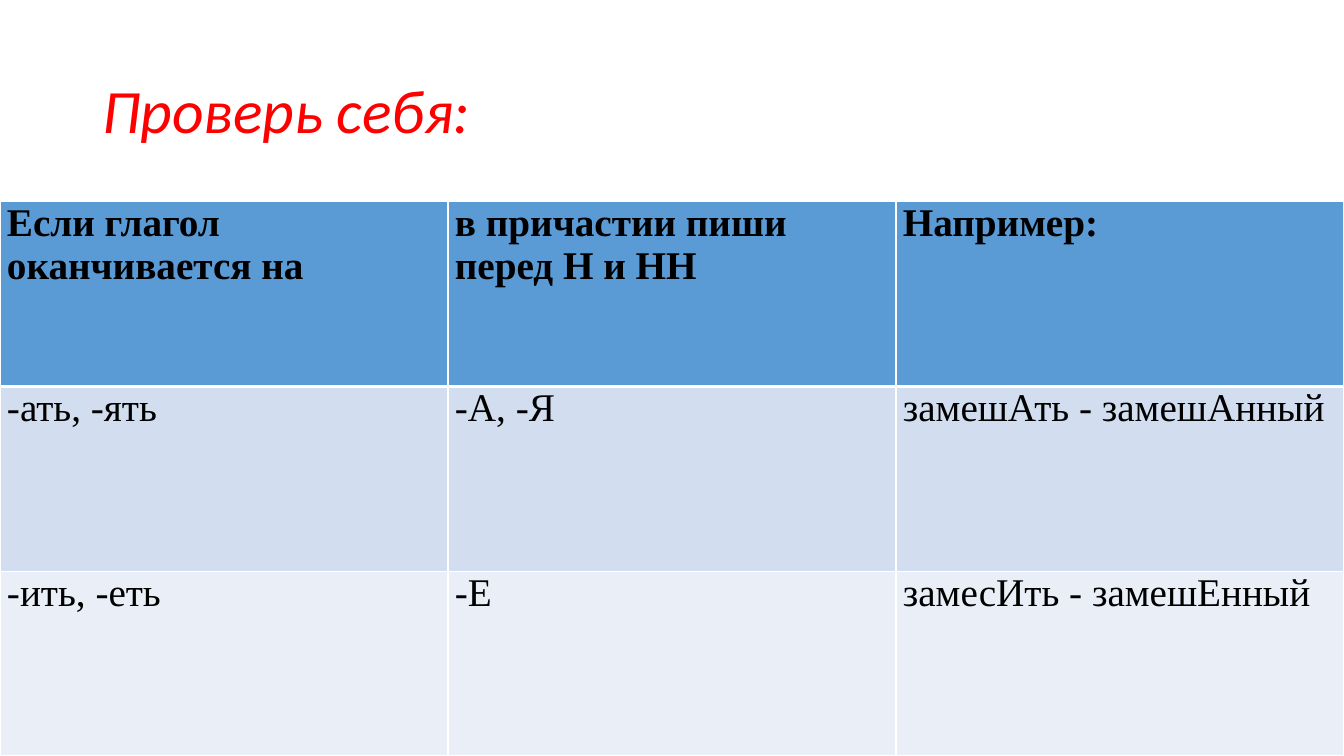
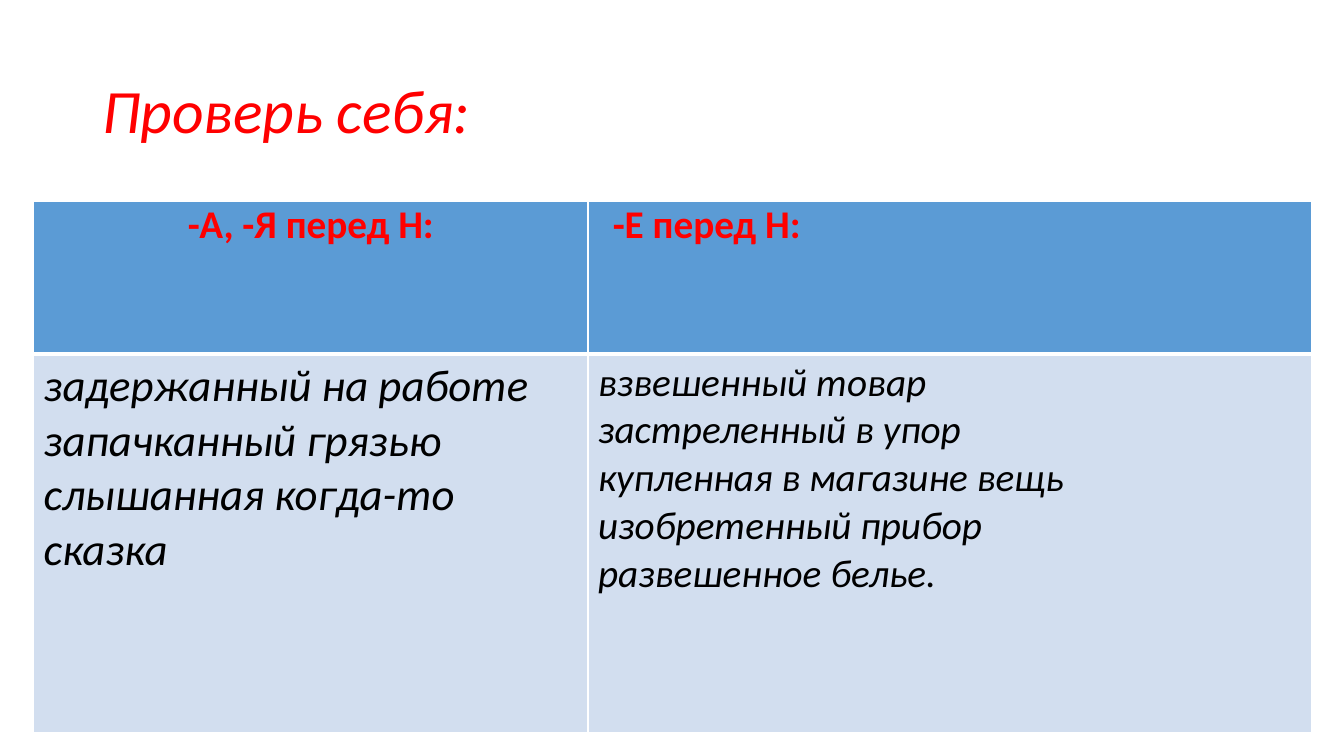
from dataclasses import dataclass

from lxml.etree import SubElement
from pptx import Presentation
from pptx.dml.color import RGBColor as Rgb
from pptx.enum.text import MSO_ANCHOR as Anchor, PP_ALIGN as Align
from pptx.oxml.ns import qn
from pptx.util import Pt


@dataclass(frozen=True)
class Theme:
    accent: str = "FF0000"
    ink: str = "000000"
    rule: str = "FFFFFF"
    header_fill: str = "5B9BD5"
    band_fills: tuple = ("D2DEEF", "EAEFF7")
    sans: str = "Calibri"
    serif: str = "Times New Roman"
    title_size: int = 44
    large_size: int = 32
    text_size: int = 28
    thin_rule: int = 1
    header_rule: int = 3


THEME = Theme()


def apply(target, values):
    for name, value in values.items():
        setattr(target, name, value)


def text_format(name, size, color, bold=False, italic=False):
    return {"name": name, "size": Pt(size), "bold": bold, "italic": italic, "color": color}


def cell_format(lines, font, left=5, right=5, vertical=0, after=0, align=Align.LEFT):
    return {
        "lines": lines,
        "font": font,
        "margins": {
            "margin_left": Pt(left),
            "margin_right": Pt(right),
            "margin_top": Pt(vertical),
            "margin_bottom": Pt(vertical),
        },
        "paragraph": {"space_after": Pt(after), "alignment": align},
    }


class Deck:
    def __init__(self, theme):
        self.theme = theme
        self.presentation = Presentation()
        apply(self.presentation, {"slide_width": Pt(960), "slide_height": Pt(540)})
        self.slide = None

    def add_slide(self, title):
        self.slide = self.presentation.slides.add_slide(self.presentation.slide_layouts[6])
        heading = self.slide.shapes.add_textbox(Pt(66), Pt(28.75), Pt(828), Pt(104.4))
        apply(heading.text_frame, {"word_wrap": True, "vertical_anchor": Anchor.MIDDLE})
        theme = self.theme
        font = text_format(theme.sans, theme.title_size, theme.accent, italic=True)
        self.add_lines(heading.text_frame, [title], font, {"line_spacing": 0.9})

    def add_lines(self, frame, lines, font, paragraph_values):
        for index, line in enumerate(lines):
            paragraph = frame.add_paragraph() if index else frame.paragraphs[0]
            apply(paragraph, paragraph_values)
            run = paragraph.add_run()
            run.text = line
            apply(run.font, {key: value for key, value in font.items() if key != "color"})
            run.font.color.rgb = Rgb.from_string(font["color"])

    def add_border(self, cell, side, width):
        line = SubElement(cell._tc.get_or_add_tcPr(), qn(f"a:ln{side}"), w=str(Pt(width)))
        fill = SubElement(line, qn("a:solidFill"))
        SubElement(fill, qn("a:srgbClr"), val=self.theme.rule)

    def add_table(self, left, top, widths, heights, rows):
        theme = self.theme
        table = self.slide.shapes.add_table(
            len(heights), len(widths), Pt(left), Pt(top), Pt(sum(widths)), Pt(sum(heights))
        ).table
        for column, width in zip(table.columns, widths):
            column.width = Pt(width)
        for row, height in zip(table.rows, heights):
            row.height = Pt(height)
        bands = theme.band_fills
        for row_index, entries in enumerate(rows):
            fill = bands[(row_index - 1) % len(bands)] if row_index else theme.header_fill
            heavy_side = {0: "B", 1: "T"}.get(row_index)
            for column_index, entry in enumerate(entries):
                cell = table.cell(row_index, column_index)
                for side in "LRTB":
                    width = theme.header_rule if side == heavy_side else theme.thin_rule
                    self.add_border(cell, side, width)
                cell.fill.solid()
                cell.fill.fore_color.rgb = Rgb.from_string(fill)
                apply(cell, entry["margins"])
                self.add_lines(cell.text_frame, entry["lines"], entry["font"], entry["paragraph"])


def add_rule_slide(deck):
    theme = deck.theme
    rule_rows = [
        ["Если глагол оканчивается на", "в причастии пиши перед Н и НН", "Например:"],
        ["-ать, -ять", "-А, -Я", "замешАть - замешАнный"],
        ["-ить, -еть", "-Е", "замесИть - замешЕнный"],
    ]
    rows = [
        [
            cell_format(
                [wording],
                text_format(theme.serif, theme.text_size, theme.ink, bold=index == 0),
                after=7.5,
            )
            for wording in wordings
        ]
        for index, wordings in enumerate(rule_rows)
    ]
    deck.add_slide("Проверь себя:")
    deck.add_table(0, 144, [320] * 3, [132] * 3, rows)


def add_examples_slide(deck):
    theme = deck.theme
    heading_font = text_format(theme.sans, theme.text_size, theme.accent, bold=True)
    a_examples = ["задержанный на работе", "запачканный грязью", "слышанная когда-то сказка"]
    e_examples = [
        "взвешенный товар",
        "застреленный в упор",
        "купленная в магазине вещь",
        "изобретенный прибор",
        "развешенное белье.",
    ]
    headings = [
        cell_format(["-А, -Я перед Н:"], heading_font, after=6.8, align=Align.CENTER),
        cell_format(["-Е перед Н:"], heading_font, left=17.7, after=6.8),
    ]
    examples = [
        cell_format(
            lines,
            text_format(theme.sans, size, theme.ink, italic=True),
            left=7.2,
            right=7.2,
            vertical=3.6,
        )
        for lines, size in ((a_examples, theme.large_size), (e_examples, theme.text_size))
    ]
    deck.add_slide("Проверь себя:")
    deck.add_table(24, 144, [396, 517], [108.7, 270.7], [headings, examples])


def main():
    deck = Deck(THEME)
    add_rule_slide(deck)
    add_examples_slide(deck)
    deck.presentation.save("out.pptx")


if __name__ == "__main__":
    main()
